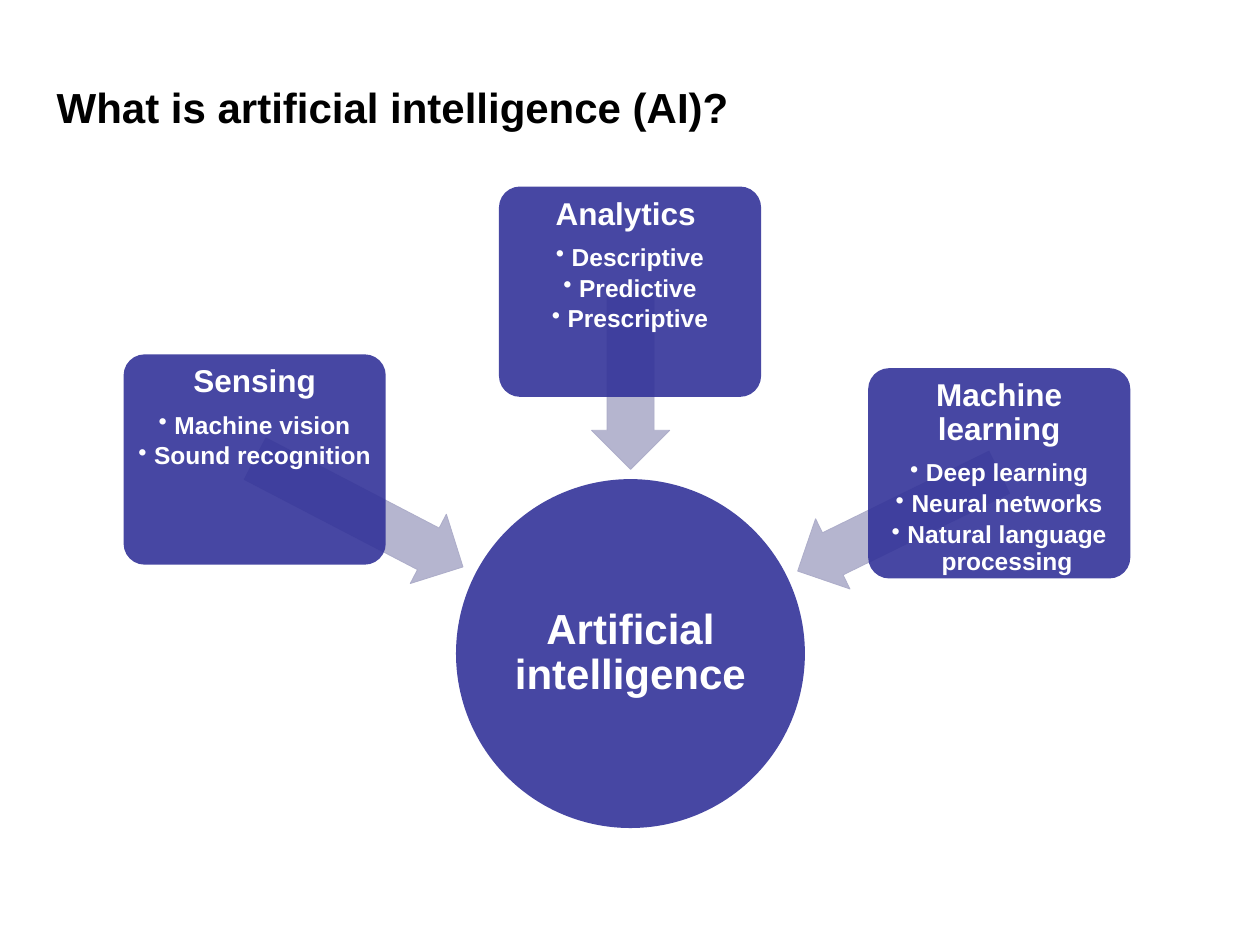
from dataclasses import dataclass

from lxml.etree import SubElement
from pptx import Presentation
from pptx.dml.color import RGBColor
from pptx.enum.shapes import MSO_SHAPE
from pptx.enum.text import MSO_ANCHOR, PP_ALIGN
from pptx.oxml.ns import qn
from pptx.shapes.autoshape import Shape
from pptx.slide import Slide
from pptx.util import Pt

INDIGO = RGBColor(0x33, 0x33, 0x99)
LAVENDER = RGBColor(0xAE, 0xAE, 0xCA)
WHITE = RGBColor(0xFF, 0xFF, 0xFF)
BLACK = RGBColor(0, 0, 0)

BOX_W, BOX_H = 149.8, 120.2
ARROW_H = 44.6
HEADING = {"size": Pt(18), "space_after": Pt(7.5)}
BULLET = {"size": Pt(14), "space_after": Pt(2.5)}


@dataclass
class Arrow:
    left: float
    top: float
    width: float
    rotation: float


@dataclass
class Topic:
    heading: str
    items: list[str]
    left: float
    top: float
    arrow: Arrow


TOPICS = [
    Topic("Sensing", ["Machine vision", "Sound recognition"],
          70.6, 202.5, Arrow(138.2, 270.7, 133.9, 207.5)),
    Topic("Analytics ", ["Descriptive", "Predictive", "Prescriptive"],
          285.1, 106.6, Arrow(309.6, 195.1, 101.5, 270)),
    Topic("Machine learning",
          ["Deep learning", "Neural networks", "Natural language processing"],
          496.1, 210.4, Arrow(449.3, 275.8, 128.2, 333.9)),
]


def apply(target: object, values: dict) -> None:
    for name, value in values.items():
        setattr(target, name, value)


def add_filled(s: Slide, kind: MSO_SHAPE, left: float, top: float,
               width: float, height: float, color: RGBColor) -> Shape:
    sp = s.shapes.add_shape(kind, Pt(left), Pt(top), Pt(width), Pt(height))
    sp.shadow.inherit = False
    sp.fill.solid()
    sp.fill.fore_color.rgb = color
    rgb = sp.fill._xPr.find(qn("a:solidFill")).find(qn("a:srgbClr"))
    SubElement(rgb, qn("a:alpha"), val="90000")
    sp.line.fill.background()
    return sp


def set_frame(sp: Shape, inset: float, anchor: MSO_ANCHOR) -> None:
    sides = ("left", "top", "right", "bottom")
    apply(sp.text_frame, {f"margin_{side}": Pt(inset) for side in sides})
    apply(sp.text_frame, {"word_wrap": True, "vertical_anchor": anchor})


def write(p, text: str, size: Pt, color: RGBColor = WHITE,
          align: PP_ALIGN = PP_ALIGN.CENTER, space_after: Pt = Pt(0)) -> None:
    apply(p, {"alignment": align, "line_spacing": 0.9, "space_after": space_after})
    r = p.add_run()
    r.text = text
    apply(r.font, {"name": "Arial", "size": size, "bold": True})
    r.font.color.rgb = color


def set_bullet(p) -> None:
    p.level = 1
    pPr = p._p.get_or_add_pPr()
    pPr.set("marL", str(Pt(9)))
    pPr.set("indent", str(-Pt(9)))
    SubElement(pPr, qn("a:buChar"), char="•")


def add_arrow(s: Slide, arrow: Arrow) -> None:
    sp = add_filled(s, MSO_SHAPE.LEFT_ARROW, arrow.left, arrow.top,
                    arrow.width, ARROW_H, LAVENDER)
    sp.adjustments[0] = 0.6
    sp.adjustments[1] = 0.5
    sp.rotation = arrow.rotation
    sp.line.color.rgb = LAVENDER
    sp.line.width = Pt(0.5)


def add_topic(s: Slide, topic: Topic) -> None:
    add_arrow(s, topic.arrow)
    sp = add_filled(s, MSO_SHAPE.ROUNDED_RECTANGLE, topic.left, topic.top,
                    BOX_W, BOX_H, INDIGO)
    sp.adjustments[0] = 0.1
    set_frame(sp, 3, MSO_ANCHOR.TOP)
    tf = sp.text_frame
    write(tf.paragraphs[0], topic.heading, **HEADING)
    for item in topic.items:
        p = tf.add_paragraph()
        set_bullet(p)
        write(p, item, **BULLET)


def add_hub(s: Slide) -> None:
    sp = add_filled(s, MSO_SHAPE.OVAL, 260.6, 273.8, 199.4, 199.4, INDIGO)
    set_frame(sp, 1.5, MSO_ANCHOR.MIDDLE)
    write(sp.text_frame.paragraphs[0], "Artificial intelligence", Pt(24))


def set_title(s: Slide) -> None:
    title = s.shapes.title
    apply(title, {"left": Pt(25.2), "top": Pt(43.2),
                  "width": Pt(459.4), "height": Pt(36)})
    apply(title.text_frame, {"word_wrap": True, "vertical_anchor": MSO_ANCHOR.MIDDLE})
    p = title.text_frame.paragraphs[0]
    write(p, "What is artificial intelligence (AI)?", Pt(24), BLACK, PP_ALIGN.LEFT)
    p.line_spacing = 1.0


def main() -> None:
    prs = Presentation()
    apply(prs, {"slide_width": Pt(720), "slide_height": Pt(540)})
    s = prs.slides.add_slide(prs.slide_layouts[5])
    set_title(s)
    add_hub(s)
    for topic in TOPICS:
        add_topic(s, topic)
    prs.save("out.pptx")


if __name__ == "__main__":
    main()
